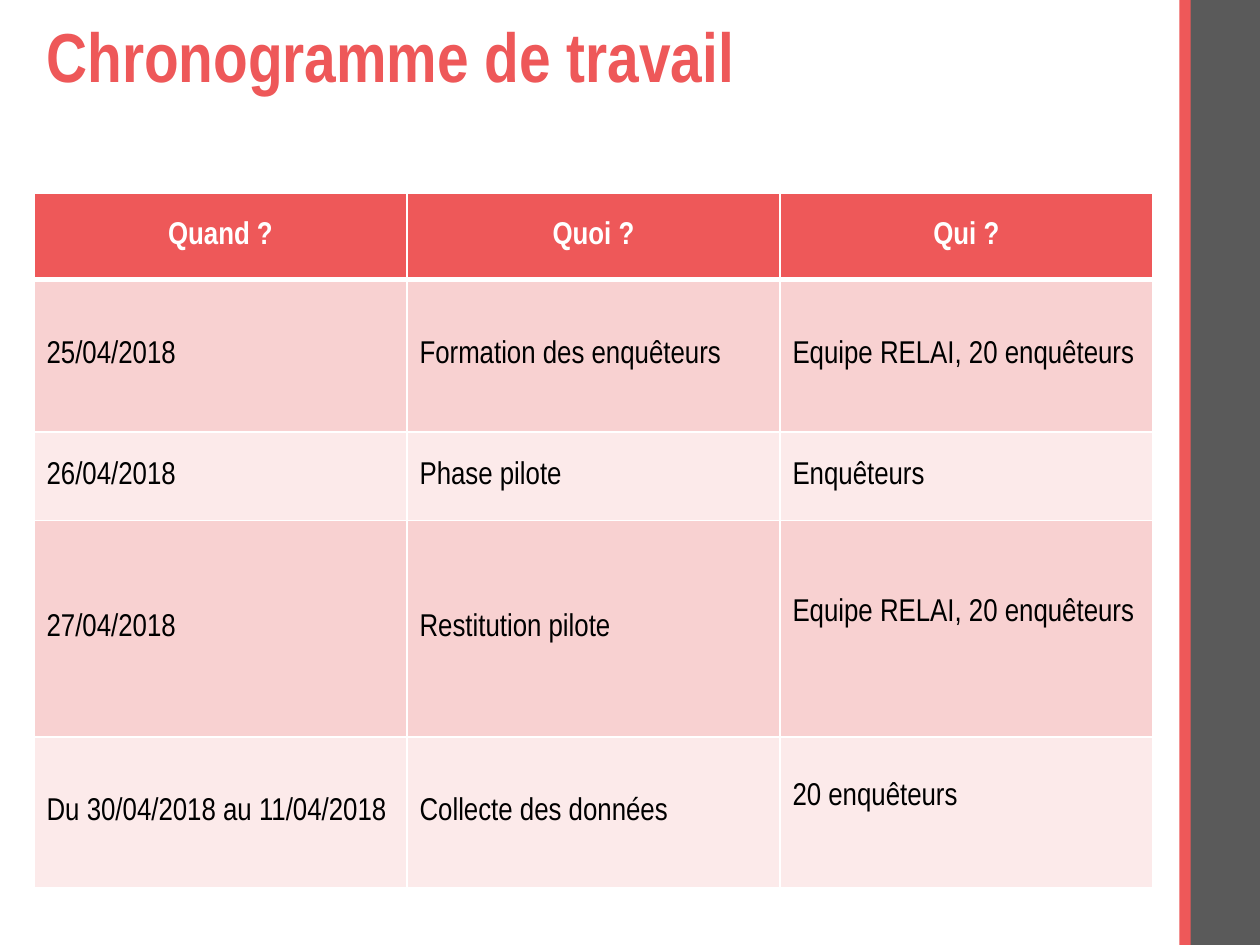
from pptx import Presentation
from pptx.dml.color import RGBColor
from pptx.enum.shapes import MSO_SHAPE
from pptx.enum.text import MSO_ANCHOR, PP_ALIGN
from pptx.oxml import parse_xml
from pptx.oxml.ns import nsdecls
from pptx.util import Inches, Pt

RECTANGLE = MSO_SHAPE.RECTANGLE
MIDDLE = MSO_ANCHOR.MIDDLE
LEFT, CENTER = PP_ALIGN.LEFT, PP_ALIGN.CENTER

RED = RGBColor(0xEE, 0x58, 0x59)
GRAY = RGBColor(0x5A, 0x5A, 0x5A)
PINK = RGBColor(0xF8, 0xD1, 0xD1)
PALE = RGBColor(0xFC, 0xEA, 0xEA)
WHITE = RGBColor(0xFF, 0xFF, 0xFF)
BLACK = RGBColor(0x00, 0x00, 0x00)

SCHEDULE = [
    ("Quand ?", "Quoi ?", "Qui ?"),
    ("25/04/2018", "Formation des enquêteurs", "Equipe RELAI, 20 enquêteurs"),
    ("26/04/2018", "Phase pilote", "Enquêteurs"),
    ("27/04/2018", "Restitution pilote", "Equipe RELAI, 20 enquêteurs"),
    ("Du 30/04/2018 au 11/04/2018", "Collecte des données", "20 enquêteurs"),
]
ROW_HEIGHTS = [0.69, 1.21, 0.7, 1.72, 1.2]
RAISED_CELLS = {(3, 2), (4, 2)}


class SlideBuilder:
    """Draws styled elements on the current slide."""

    font_name = "Arial Narrow"

    def __init__(self, page):
        self.page = page

    def style(self, para, size, color, bold=False, align=LEFT):
        para.alignment = align
        para.font.name = self.font_name
        para.font.size = Pt(size)
        para.font.color.rgb = color
        para.font.bold = bold

    def bar(self, left, width, color):
        bar = self.page.shapes.add_shape(
            RECTANGLE, Inches(left), 0, Inches(width), Inches(7.5))
        bar.shadow.inherit = False
        bar.fill.solid()
        bar.fill.fore_color.rgb = color
        bar.line.fill.background()

    def title(self, text, left, top, width, height):
        box = self.page.shapes.add_textbox(
            Inches(left), Inches(top), Inches(width), Inches(height))
        frame = box.text_frame
        frame.word_wrap = True
        frame.vertical_anchor = MIDDLE
        para = frame.paragraphs[0]
        para.text = text
        para.line_spacing = 0.9
        self.style(para, 39.6, RED, bold=True)

    def borders(self, cell, top, bottom):
        properties = cell._tc.get_or_add_tcPr()
        sides = [("L", 1), ("R", 1), ("T", top), ("B", bottom)]
        for index, (side, width) in enumerate(sides):
            properties.insert(index, parse_xml(
                f'<a:ln{side} {nsdecls("a")} w="{Pt(width)}"><a:solidFill>'
                f'<a:srgbClr val="{WHITE}"/></a:solidFill></a:ln{side}>'))

    def table(self, rows, heights, left, top, width):
        table = self.page.shapes.add_table(
            len(rows), len(rows[0]), Inches(left), Inches(top),
            Inches(width), Inches(sum(heights))).table
        for row_index, texts in enumerate(rows):
            table.rows[row_index].height = Inches(heights[row_index])
            header = row_index == 0
            fill = RED if header else PINK if row_index % 2 else PALE
            for column_index, text in enumerate(texts):
                cell = table.cell(row_index, column_index)
                cell.fill.solid()
                cell.fill.fore_color.rgb = fill
                cell.vertical_anchor = MIDDLE
                if (row_index, column_index) in RAISED_CELLS:
                    cell.margin_bottom = Inches(0.29)
                para = cell.text_frame.paragraphs[0]
                para.text = text
                self.style(para, 18, WHITE if header else BLACK, header,
                           CENTER if header else LEFT)
                self.borders(cell, 3 if row_index == 1 else 1, 3 if header else 1)


def main():
    deck = Presentation()
    deck.slide_width, deck.slide_height = Inches(10), Inches(7.5)
    builder = SlideBuilder(deck.slides.add_slide(deck.slide_layouts[6]))
    builder.bar(9.43, 0.57, GRAY)
    builder.bar(9.36, 0.09, RED)
    builder.title("Chronogramme de travail", 0.27, 0.15, 8.98, 0.65)
    builder.table(SCHEDULE, ROW_HEIGHTS, 0.27, 1.53, 8.88)
    deck.save("out.pptx")


if __name__ == "__main__":
    main()
